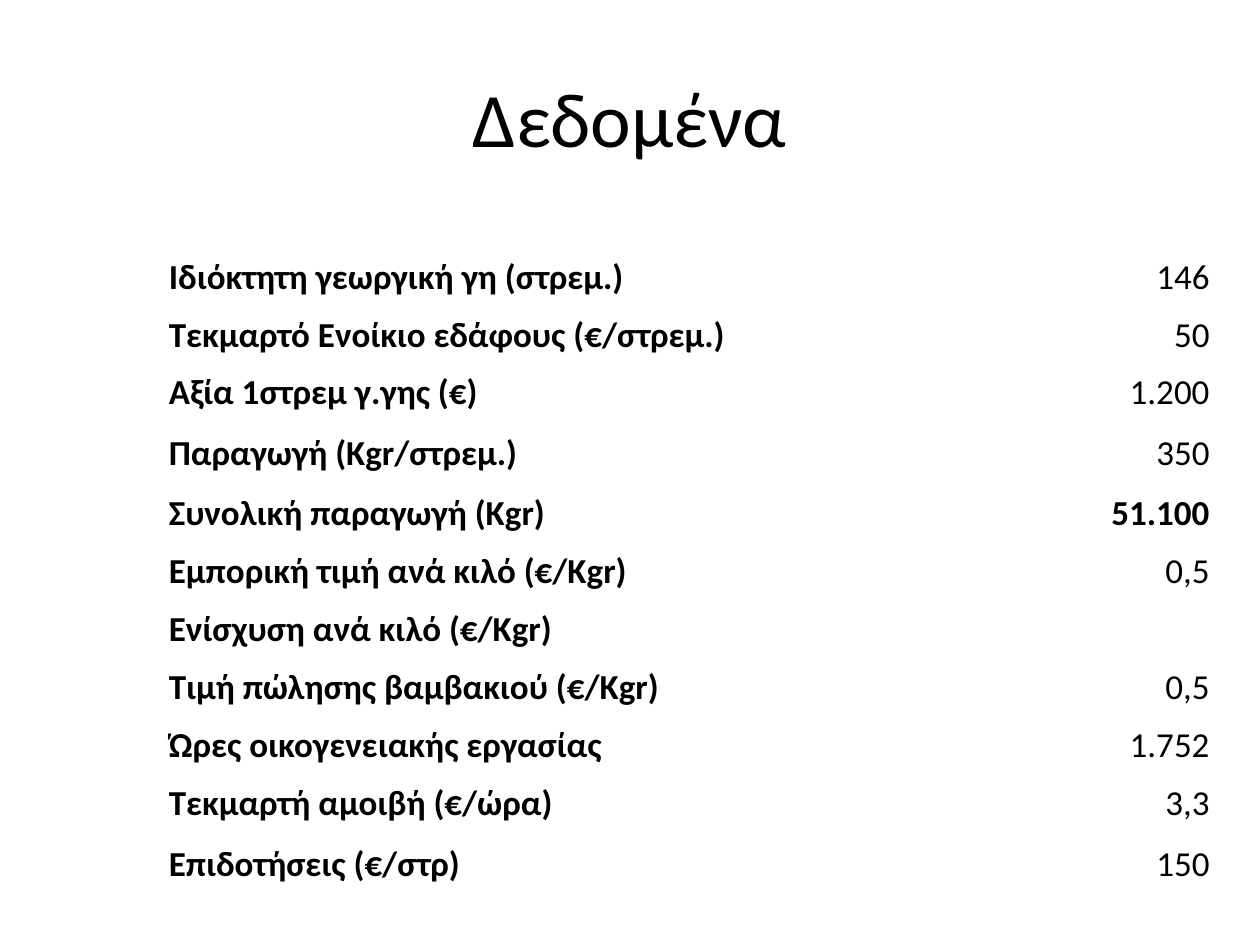
from pptx import Presentation
from pptx.dml.color import RGBColor
from pptx.enum.text import MSO_ANCHOR, PP_ALIGN
from pptx.util import Pt

MIDDLE, BOTTOM = MSO_ANCHOR.MIDDLE, MSO_ANCHOR.BOTTOM
LEFT, CENTER, RIGHT = PP_ALIGN.LEFT, PP_ALIGN.CENTER, PP_ALIGN.RIGHT

TITLE_ONLY = 5
FONT = "Calibri"
BLACK = "000000"
TALL, LOW = 34.56, 33.12
HEADER_HEIGHT = TALL
COLUMN_WIDTHS = (408.96, 187.2)

FARM_DATA = [
    ("Ιδιόκτητη γεωργική γη (στρεμ.)", "146", TALL),
    ("Τεκμαρτό Ενοίκιο εδάφους (€/στρεμ.)", "50", LOW),
    ("Αξία 1στρεμ γ.γης (€)", "1.200", LOW),
    ("Παραγωγή (Kgr/στρεμ.)", "350", TALL),
    ("Συνολική παραγωγή (Kgr)", "51.100", TALL),
    ("Εμπορική τιμή ανά κιλό (€/Kgr)", "0,5", LOW),
    ("Ενίσχυση ανά κιλό (€/Kgr)", "", LOW),
    ("Tιμή πώλησης βαμβακιού (€/Kgr)", "0,5", LOW),
    ("Ώρες οικογενειακής εργασίας", "1.752", LOW),
    ("Τεκμαρτή αμοιβή (€/ώρα)", "3,3", LOW),
    ("Επιδοτήσεις (€/στρ)", "150", TALL),
]
TOTAL = "51.100"


def rgb(color):
    return RGBColor.from_string(color)


def write(frame, text, size, align, bold=False):
    frame.text = text
    paragraph = frame.paragraphs[0]
    paragraph.alignment = align
    for run in paragraph.runs:
        run.font.name = FONT
        run.font.size = Pt(size)
        run.font.bold = bold
        run.font.color.rgb = rgb(BLACK)


def add_title(slide, text):
    title = slide.shapes.title
    title.left, title.top, title.width, title.height = Pt(36), Pt(21.6), Pt(648), Pt(90)
    title.text_frame.vertical_anchor = MIDDLE
    write(title.text_frame, text, 44, CENTER)


def fill_cell(cell, text, align, bold):
    cell.vertical_anchor = BOTTOM
    cell.margin_left = cell.margin_right = cell.margin_top = Pt(0.72)
    cell.margin_bottom = Pt(0)
    if text:
        write(cell.text_frame, text, 20, align, bold)


def add_farm_table(slide):
    heights = [HEADER_HEIGHT] + [height for _, _, height in FARM_DATA]
    table = slide.shapes.add_table(
        len(heights), len(COLUMN_WIDTHS), Pt(95.76), Pt(101.52),
        Pt(sum(COLUMN_WIDTHS)), Pt(sum(heights))).table
    table.first_row = table.horz_banding = False
    for column, width in zip(table.columns, COLUMN_WIDTHS):
        column.width = Pt(width)
    for row, height in zip(table.rows, heights):
        row.height = Pt(height)
    for cell in table.iter_cells():
        cell.fill.background()
    table.cell(0, 0).merge(table.cell(0, 1))
    for index, (label, value, _) in enumerate(FARM_DATA, 1):
        fill_cell(table.cell(index, 0), label, LEFT, True)
        fill_cell(table.cell(index, 1), value, RIGHT, value == TOTAL)


def main():
    presentation = Presentation()
    presentation.slide_width, presentation.slide_height = Pt(720), Pt(540)
    slide = presentation.slides.add_slide(presentation.slide_layouts[TITLE_ONLY])
    add_title(slide, "Δεδομένα")
    add_farm_table(slide)
    presentation.save("out.pptx")


if __name__ == "__main__":
    main()
